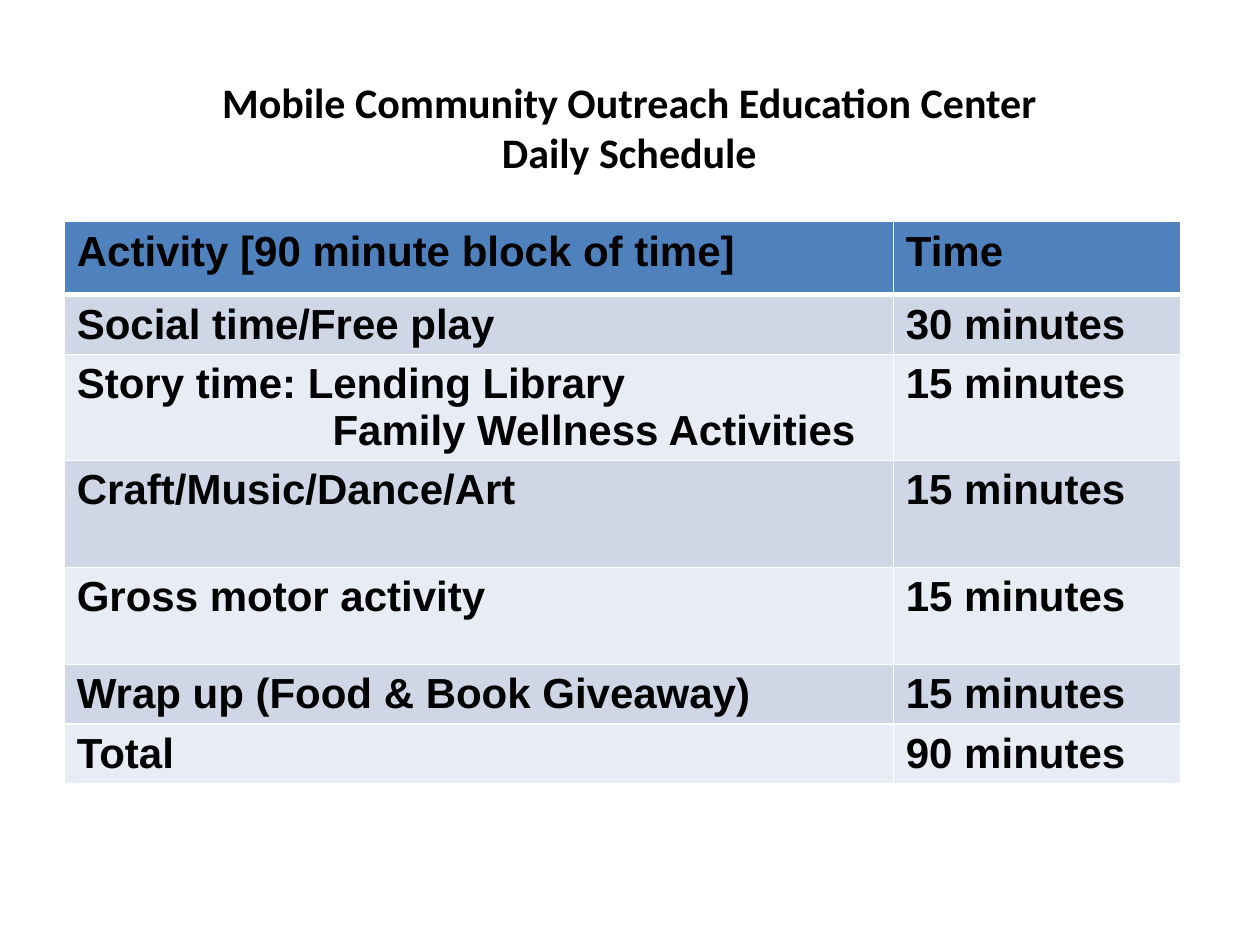
from typing import NamedTuple

from lxml.etree import SubElement
from pptx import Presentation
from pptx.dml.color import RGBColor
from pptx.enum.text import MSO_ANCHOR, MSO_AUTO_SIZE, PP_ALIGN
from pptx.oxml.ns import qn
from pptx.util import Inches, Pt

BLACK = RGBColor(0x00, 0x00, 0x00)
WHITE = RGBColor(0xFF, 0xFF, 0xFF)
HEADER_BLUE = RGBColor(0x4F, 0x81, 0xBD)
BANDS = (RGBColor(0xCF, 0xD7, 0xE7), RGBColor(0xE8, 0xEC, 0xF4))

TITLE_LINES = ("Mobile Community Outreach Education Center", "Daily Schedule")
COLUMN_WIDTHS = (6.58, 2.28)
SECOND_LINE_INDENT = Inches(2.03)
TEXT_FORMAT = {"size": Pt(24), "bold": True}
THIN, THICK = Pt(1), Pt(3)


class ScheduleRow(NamedTuple):
    activity: tuple[str, ...]
    time: str
    height: float


SCHEDULE = (
    ScheduleRow(("Activity [90 minute block of time]",), "Time", 0.58),
    ScheduleRow(("Social time/Free play",), "30 minutes", 0.47),
    ScheduleRow(("Story time: Lending Library", "Family Wellness Activities"), "15 minutes", 0.84),
    ScheduleRow(("Craft/Music/Dance/Art",), "15 minutes", 0.85),
    ScheduleRow(("Gross motor activity",), "15 minutes", 0.77),
    ScheduleRow(("Wrap up (Food & Book Giveaway)",), "15 minutes", 0.47),
    ScheduleRow(("Total",), "90 minutes", 0.47),
)


def write_lines(frame, lines: tuple[str, ...], font_name: str, align: PP_ALIGN) -> None:
    for index, line in enumerate(lines):
        para = frame.paragraphs[0] if index == 0 else frame.add_paragraph()
        para.alignment = align
        span = para.add_run()
        span.text = line
        span.font.name = font_name
        span.font.color.rgb = BLACK
        for name, value in TEXT_FORMAT.items():
            setattr(span.font, name, value)


def add_borders(cell, top: int, bottom: int) -> None:
    properties = cell._tc.get_or_add_tcPr()
    for side, width in {"L": THIN, "R": THIN, "T": top, "B": bottom}.items():
        line = SubElement(properties, qn(f"a:ln{side}"), w=str(int(width)))
        fill = SubElement(line, qn("a:solidFill"))
        SubElement(fill, qn("a:srgbClr"), val=str(WHITE))


def add_title(page) -> None:
    box = page.shapes.title
    placement = {"left": 0.83, "top": 0.55, "width": 8.33, "height": 0.91}
    for name, value in placement.items():
        setattr(box, name, Inches(value))
    frame = box.text_frame
    frame.word_wrap = True
    frame.auto_size = MSO_AUTO_SIZE.NONE
    frame.vertical_anchor = MSO_ANCHOR.MIDDLE
    write_lines(frame, TITLE_LINES, "Calibri", PP_ALIGN.CENTER)


def add_schedule(page) -> None:
    height = sum(row.height for row in SCHEDULE)
    table = page.shapes.add_table(
        len(SCHEDULE), len(COLUMN_WIDTHS), Inches(0.51), Inches(1.76),
        Inches(sum(COLUMN_WIDTHS)), Inches(height),
    ).table
    for column, width in zip(table.columns, COLUMN_WIDTHS):
        column.width = Inches(width)
    for index, row in enumerate(SCHEDULE):
        table.rows[index].height = Inches(row.height)
        color = HEADER_BLUE if index == 0 else BANDS[(index - 1) % 2]
        for column, lines in enumerate((row.activity, (row.time,))):
            cell = table.cell(index, column)
            add_borders(cell, THICK if index == 1 else THIN, THICK if index == 0 else THIN)
            cell.fill.solid()
            cell.fill.fore_color.rgb = color
            write_lines(cell.text_frame, lines, "Arial", PP_ALIGN.LEFT)
            for para in cell.text_frame.paragraphs[1:]:
                para._p.get_or_add_pPr().set("marL", str(int(SECOND_LINE_INDENT)))


def main() -> None:
    deck = Presentation()
    deck.slide_width, deck.slide_height = Inches(10), Inches(7.5)
    page = deck.slides.add_slide(deck.slide_layouts.get_by_name("Title Only"))
    add_title(page)
    add_schedule(page)
    deck.save("out.pptx")


if __name__ == "__main__":
    main()
